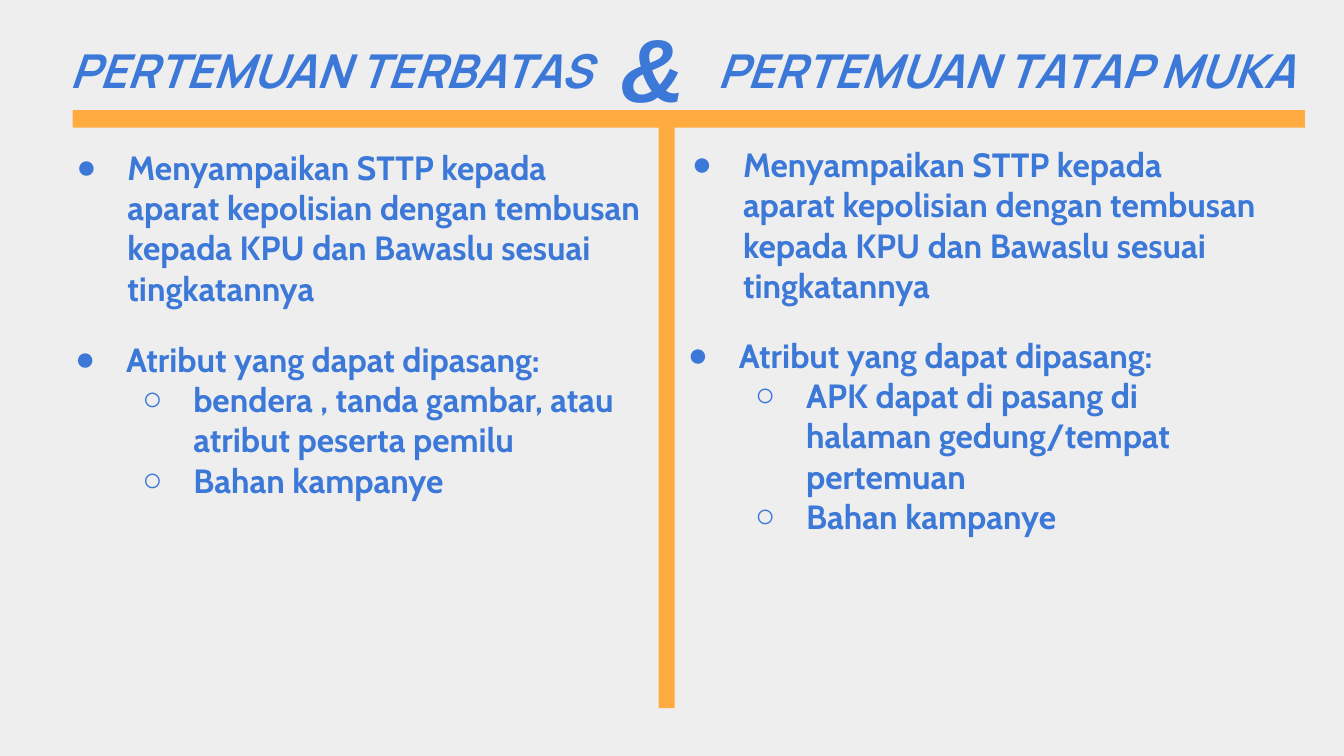
from lxml.etree import SubElement
from pptx import Presentation
from pptx.dml.color import RGBColor
from pptx.enum.shapes import MSO_SHAPE
from pptx.oxml.ns import qn
from pptx.util import Inches, Pt

BLUE, ORANGE, GREY = "3C78D8", "FFAB40", "EEEEEE"
WIDTH = 10
HEIGHT = WIDTH * 9 / 16
BULLETS = "●○"
LIST_WIDTH = 4.55

HEADINGS = [
    ("PERTEMUAN TERBATAS", 0.42, 0.21, 4.27, 25, "Manrope"),
    ("PERTEMUAN TATAP MUKA", 5.24, 0.21, 4.83, 25, "Manrope"),
    ("&", 4.52, 0, 0.75, 48, "Arial"),
]
BARS = [(4.9, 0.93, 0.12, 4.34), (0.54, 0.82, 9.17, 0.13)]
NOTICE = [(0, "Menyampaikan STTP kepada aparat kepolisian dengan tembusan "
              "kepada KPU dan Bawaslu sesuai tingkatannya")]
ATTRIBUTES = (0, "Atribut yang dapat dipasang:")
MATERIALS = (1, "Bahan kampanye")
LISTS = [
    (0.35, 0.99, NOTICE),
    (4.93, 0.97, NOTICE),
    (4.9, 2.39, [ATTRIBUTES, (1, "APK dapat di pasang di halaman gedung/tempat pertemuan"), MATERIALS]),
    (0.34, 2.42, [ATTRIBUTES, (1, "bendera , tanda gambar, atau atribut peserta pemilu"), MATERIALS]),
]


def color(value):
    return RGBColor.from_string(value)


def add_bar(page, area):
    bar = page.shapes.add_shape(MSO_SHAPE.RECTANGLE, *map(Inches, area))
    bar.shadow.inherit = False
    bar.fill.solid()
    bar.fill.fore_color.rgb = color(ORANGE)
    bar.line.fill.background()


def add_text(page, left, top, width, height, lines, size, font, italic=False):
    box = page.shapes.add_textbox(*map(Inches, (left, top, width, height)))
    frame = box.text_frame
    frame.word_wrap = True
    frame.margin_left = frame.margin_right = Inches(0.1)
    frame.margin_top = frame.margin_bottom = Inches(0.1)
    frame.text = "\n".join(lines)
    for paragraph in frame.paragraphs:
        for span in paragraph.runs:
            span.font.name = font
            span.font.size = Pt(size)
            span.font.bold = True
            span.font.italic = italic
            span.font.color.rgb = color(BLUE)
    return frame


def add_bullet(paragraph, level):
    paragraph.level = level
    properties = paragraph._p.get_or_add_pPr()
    properties.set("marL", str(Inches(0.5 * (level + 1))))
    properties.set("indent", str(Inches(-0.38)))
    tint = SubElement(properties, qn("a:buClr"))
    SubElement(tint, qn("a:srgbClr")).set("val", BLUE)
    SubElement(properties, qn("a:buFont")).set("typeface", "Arial")
    SubElement(properties, qn("a:buChar")).set("char", BULLETS[level])


def main():
    """Build the slide comparing the two kinds of campaign meeting."""
    deck = Presentation()
    deck.slide_width, deck.slide_height = Inches(WIDTH), Inches(HEIGHT)
    page = deck.slides.add_slide(deck.slide_layouts[6])
    page.background.fill.solid()
    page.background.fill.fore_color.rgb = color(GREY)
    for area in BARS:
        add_bar(page, area)
    for text, left, top, width, size, font in HEADINGS:
        add_text(page, left, top, width, 0.94, [text], size, font, italic=True)
    for left, top, items in LISTS:
        lines = [text for _, text in items]
        frame = add_text(page, left, top, LIST_WIDTH, 0.58, lines, 18, "Cabin")
        for paragraph, (level, _) in zip(frame.paragraphs, items):
            add_bullet(paragraph, level)
    deck.save("out.pptx")


if __name__ == "__main__":
    main()
